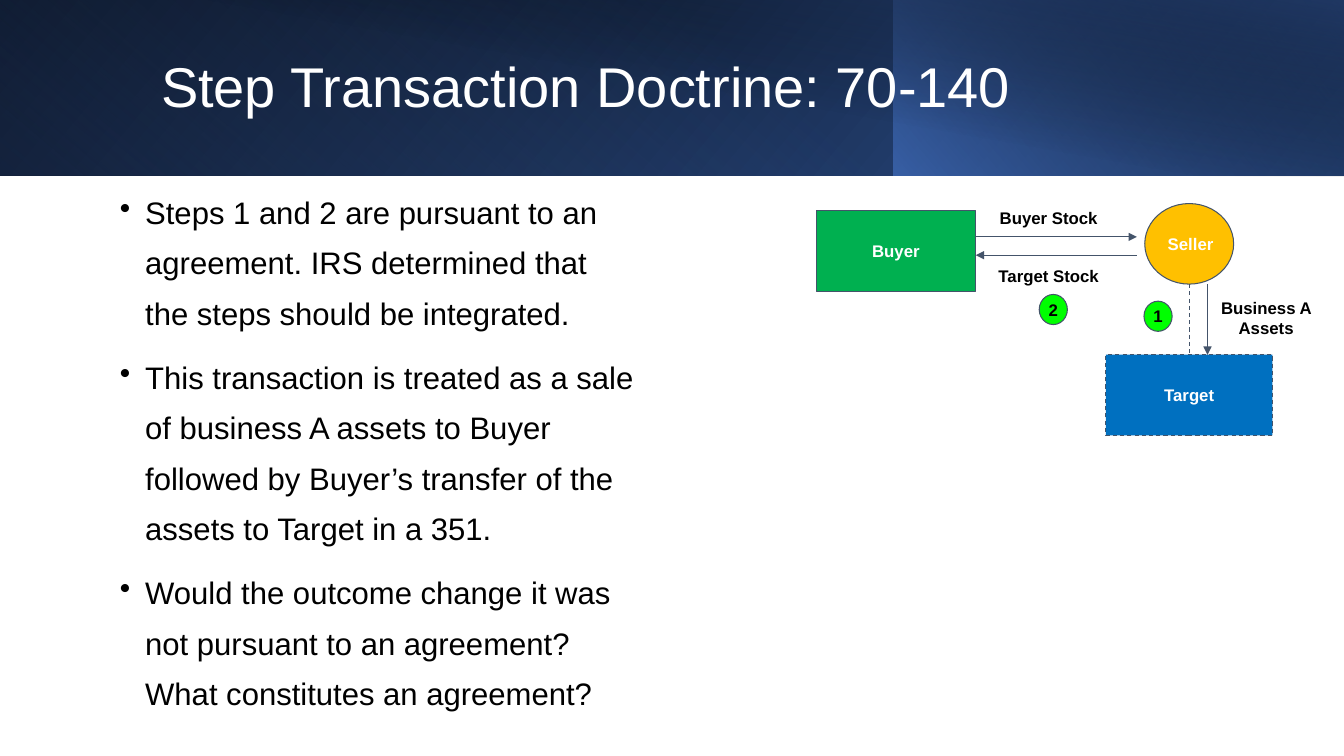
from lxml.etree import SubElement
from pptx import Presentation
from pptx.dml.color import RGBColor
from pptx.enum.dml import MSO_LINE
from pptx.enum.shapes import MSO_CONNECTOR, MSO_SHAPE
from pptx.enum.text import MSO_ANCHOR, PP_ALIGN
from pptx.oxml import parse_xml
from pptx.oxml.ns import nsdecls, qn
from pptx.util import Cm, Pt

WHITE = RGBColor(0xFF, 0xFF, 0xFF)
BLACK = RGBColor(0x00, 0x00, 0x00)
NAVY = RGBColor(0x20, 0x38, 0x64)
DEEP_BLUE = RGBColor(0x2F, 0x55, 0x97)
BRIGHT_BLUE = RGBColor(0x44, 0x72, 0xC4)
SLATE = RGBColor(0x44, 0x54, 0x6A)
GREEN = RGBColor(0x00, 0xB0, 0x50)
LIME = RGBColor(0x00, 0xFF, 0x00)
GOLD = RGBColor(0xFF, 0xC0, 0x00)
TARGET_BLUE = RGBColor(0x00, 0x70, 0xC0)

SLIDE_WIDTH, SLIDE_HEIGHT = 33.87, 19.05
BANNER_HEIGHT = 4.42
BOX_HEIGHT = 2.03
BUYER_LEFT, BUYER_TOP, BUYER_RIGHT = 20.57, 5.31, 24.59
SELLER_LEFT, SELLER_TOP, SELLER_WIDTH = 28.85, 5.13, 2.24
SELLER_CENTER = SELLER_LEFT + SELLER_WIDTH / 2
SELLER_BOTTOM = SELLER_TOP + BOX_HEIGHT
TARGET_TOP, TARGET_WIDTH = 8.94, 4.2
STOCK_ARROW_END = 28.65
ASSETS_ARROW_X = 30.43

POINTS = (
    "Steps 1 and 2 are pursuant to an agreement. IRS determined that the steps should be integrated.",
    "This transaction is treated as a sale of business A assets to Buyer followed by Buyer’s "
    "transfer of the assets to Target in a 351.",
    "Would the outcome change it was not pursuant to an agreement? What constitutes an agreement?",
)


class DiagramSlide:
    font_name = "Arial"
    label_size = Pt(12)
    line_width = Pt(0.75)
    inset = 0.25

    def __init__(self, slide):
        self.slide = slide

    def style_font(self, paragraph, size, color, bold=False):
        font = paragraph.font
        font.name, font.size, font.bold = self.font_name, size, bold
        font.color.rgb = color

    def set_insets(self, frame, inset):
        frame.margin_left = frame.margin_right = Cm(inset)
        frame.margin_top = frame.margin_bottom = Cm(inset)

    def style_line(self, line, dashed=False):
        line.color.rgb = SLATE
        line.width = self.line_width
        if dashed:
            line.dash_style = MSO_LINE.DASH

    def gradient_panel(self, box, stops, angle, flip=True, rotation=0):
        """Add a panel whose stops are (position %, colour, opacity %)."""
        panel = self.slide.shapes.add_shape(MSO_SHAPE.RECTANGLE, *map(Cm, box))
        panel.shadow.inherit = False
        panel.rotation = rotation
        panel.line.fill.background()
        properties = panel._element.spPr
        if flip:
            properties.find(qn("a:xfrm")).set("flipH", "1")
        stop_xml = "".join(
            f'<a:gs pos="{position * 1000}"><a:srgbClr val="{color}">'
            f'<a:alpha val="{opacity * 1000}"/></a:srgbClr></a:gs>'
            for position, color, opacity in stops)
        gradient = parse_xml(
            f'<a:gradFill {nsdecls("a")} rotWithShape="1"><a:gsLst>{stop_xml}</a:gsLst>'
            f'<a:lin ang="{angle * 60000}" scaled="0"/></a:gradFill>')
        properties.find(qn("a:prstGeom")).addnext(gradient)

    def text_box(self, box):
        frame = self.slide.shapes.add_textbox(*map(Cm, box)).text_frame
        frame.word_wrap = True
        return frame

    def title(self, box, text):
        frame = self.text_box(box)
        frame.vertical_anchor = MSO_ANCHOR.MIDDLE
        paragraph = frame.paragraphs[0]
        paragraph.text = text
        paragraph.line_spacing = 0.9
        self.style_font(paragraph, Pt(40), WHITE)

    def bullets(self, box, texts):
        frame = self.text_box(box)
        for index, text in enumerate(texts):
            paragraph = frame.add_paragraph() if index else frame.paragraphs[0]
            paragraph.text = text
            paragraph.line_spacing = 1.35
            paragraph.space_before = Pt(10)
            self.style_font(paragraph, Pt(22.2), BLACK)
            properties = paragraph._p.get_or_add_pPr()
            properties.set("marL", str(Cm(0.64)))
            properties.set("indent", str(-Cm(0.64)))
            bullet = parse_xml(f'<a:buChar {nsdecls("a")} char="•"/>')
            properties.find(qn("a:defRPr")).addprevious(bullet)

    def label(self, left, top, text):
        frame = self.text_box((left, top, 3.68, 0.76))
        self.set_insets(frame, self.inset)
        paragraph = frame.paragraphs[0]
        paragraph.text = text
        paragraph.alignment = PP_ALIGN.CENTER
        self.style_font(paragraph, self.label_size, BLACK, bold=True)

    def node(self, kind, box, text, fill, color=WHITE, inset=inset, dashed=False,
             wrap=True, alignment=PP_ALIGN.CENTER):
        shape = self.slide.shapes.add_shape(kind, *map(Cm, box))
        shape.shadow.inherit = False
        shape.fill.solid()
        shape.fill.fore_color.rgb = fill
        self.style_line(shape.line, dashed)
        frame = shape.text_frame
        frame.word_wrap = wrap
        frame.vertical_anchor = MSO_ANCHOR.MIDDLE
        self.set_insets(frame, inset)
        paragraph = frame.paragraphs[0]
        paragraph.text = text
        paragraph.alignment = alignment
        self.style_font(paragraph, self.label_size, color, bold=True)
        return shape

    def step_badge(self, left, top, number):
        self.node(MSO_SHAPE.OVAL, (left, top, 0.71, 0.76), number, LIME, BLACK, inset=0)

    def connector(self, start, end, arrow=True, dashed=False):
        line = self.slide.shapes.add_connector(
            MSO_CONNECTOR.STRAIGHT, *map(Cm, (*start, *end)))
        self.style_line(line.line, dashed)
        if arrow:
            SubElement(line.line._get_or_add_ln(), qn("a:tailEnd"), type="triangle")
        SubElement(line._element.spPr, qn("a:effectLst"))
        return line


def draw_banner(page):
    page.gradient_panel((0, 0, SLIDE_WIDTH, BANNER_HEIGHT),
                        [(0, BLACK, 100), (100, DEEP_BLUE, 100)], 140)
    page.gradient_panel((0, 0, 22.56, BANNER_HEIGHT),
                        [(20, BRIGHT_BLUE, 0), (100, NAVY, 55)], 230, rotation=180)
    page.gradient_panel((22.53, 0, 11.34, BANNER_HEIGHT),
                        [(0, BRIGHT_BLUE, 66), (100, BLACK, 30)], 220)
    page.gradient_panel((1.27, 0, 32.6, 4.44),
                        [(50, BLACK, 0), (99, NAVY, 52)], 280, flip=False)
    page.title((3.81, 0.81, 27.48, 2.87), "Step Transaction Doctrine: 70-140")


def draw_transaction(page):
    page.node(MSO_SHAPE.RECTANGLE,
              (BUYER_LEFT, BUYER_TOP, BUYER_RIGHT - BUYER_LEFT, BOX_HEIGHT), "Buyer", GREEN)
    page.node(MSO_SHAPE.FLOWCHART_CONNECTOR,
              (SELLER_LEFT, SELLER_TOP, SELLER_WIDTH, BOX_HEIGHT), "Seller", GOLD,
              wrap=False, alignment=PP_ALIGN.LEFT)
    target = page.node(
        MSO_SHAPE.RECTANGLE,
        (SELLER_CENTER - TARGET_WIDTH / 2, TARGET_TOP, TARGET_WIDTH, BOX_HEIGHT),
        "Target", TARGET_BLUE, dashed=True)

    page.connector((BUYER_RIGHT, 5.97), (STOCK_ARROW_END, 5.97))
    page.connector((STOCK_ARROW_END, 6.43), (BUYER_RIGHT, 6.43))
    page.connector((ASSETS_ARROW_X, SELLER_BOTTOM), (ASSETS_ARROW_X, TARGET_TOP))
    ownership = page.connector((SELLER_CENTER, SELLER_BOTTOM), (SELLER_CENTER, TARGET_TOP),
                               arrow=False, dashed=True)
    ownership.end_connect(target, 0)

    page.label(BUYER_RIGHT, 4.98, "Buyer Stock")
    page.label(BUYER_RIGHT, 6.45, "Target Stock")
    page.label(30.07, 7.26, "Business A Assets")
    page.step_badge(28.83, 7.59, "1")
    page.step_badge(26.19, 7.42, "2")


def main():
    presentation = Presentation()
    presentation.slide_width = Cm(SLIDE_WIDTH)
    presentation.slide_height = Cm(SLIDE_HEIGHT)
    page = DiagramSlide(presentation.slides.add_slide(presentation.slide_layouts[6]))
    draw_banner(page)
    page.bullets((2.77, BANNER_HEIGHT, 13.54, 14.2), POINTS)
    draw_transaction(page)
    presentation.save("out.pptx")


if __name__ == "__main__":
    main()
